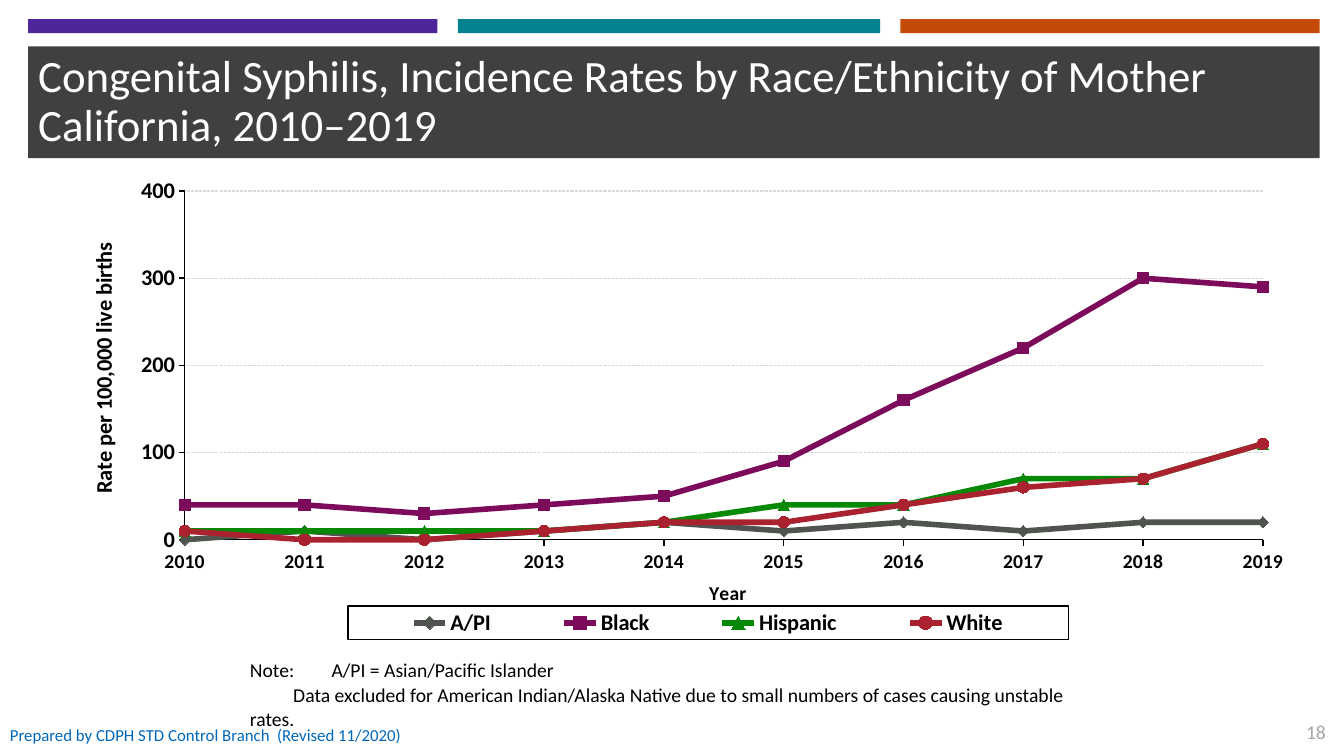
import pptx
import pptx.chart.data
import pptx.dml.color
import pptx.enum.chart
import pptx.enum.dml
import pptx.enum.shapes
import pptx.enum.text
import pptx.oxml
import pptx.oxml.ns
import pptx.util

Inches = pptx.util.Inches
Pt = pptx.util.Pt
qn = pptx.oxml.ns.qn
Align = pptx.enum.text.PP_ALIGN
Anchor = pptx.enum.text.MSO_ANCHOR
Marker = pptx.enum.chart.XL_MARKER_STYLE

COLORS = {
    "banner": "404040", "purple": "4F259C", "teal": "068190", "orange": "C44A07",
    "white": "FFFFFF", "black": "000000", "number": "A6A6A6", "footer": "0167BB",
    "grid": "D9D9D9", "api": "4F544F", "black_rate": "7C0B5B",
    "hispanic": "078807", "white_rate": "AA222F",
}
YEARS = [str(year) for year in range(2010, 2020)]
RATES = [
    ("A/PI", "api", Marker.DIAMOND, (0, 10, 0, 10, 20, 10, 20, 10, 20, 20)),
    ("Black", "black_rate", Marker.SQUARE, (40, 40, 30, 40, 50, 90, 160, 220, 300, 290)),
    ("Hispanic", "hispanic", Marker.TRIANGLE, (10, 10, 10, 10, 20, 40, 40, 70, 70, 110)),
    ("White", "white_rate", Marker.CIRCLE, (10, 0, 0, 10, 20, 20, 40, 60, 70, 110)),
]
NAMESPACES = pptx.oxml.ns.nsdecls("c", "a")


def color(name):
    return pptx.dml.color.RGBColor.from_string(COLORS[name])


def apply(target, values):
    for name, value in values.items():
        setattr(target, name, value)


def place(element, before, **fractions):
    """Give a chart part a manual layout in fractions of the chart."""
    old = element.find(qn("c:layout"))
    if old is not None:
        element.remove(old)
    target = '<c:layoutTarget val="inner"/>' if before is None else ""
    modes = "".join(f'<c:{key}Mode val="edge"/>' for key in "xy")
    sizes = "".join(f'<c:{key} val="{value}"/>' for key, value in fractions.items())
    layout = pptx.oxml.parse_xml(
        f"<c:layout {NAMESPACES}><c:manualLayout>{target}{modes}{sizes}"
        "</c:manualLayout></c:layout>")
    if before is None:
        element.insert(0, layout)
    else:
        element.find(qn(before)).addnext(layout)


class SlideBuilder:
    font_name = "Calibri"

    def __init__(self, slide):
        self.slide = slide

    def style_font(self, font, size, color_name="black", bold=False):
        apply(font, {"name": self.font_name, "size": Pt(size), "bold": bold})
        font.color.rgb = color(color_name)

    def bar(self, box, fill):
        shape = self.slide.shapes.add_shape(
            pptx.enum.shapes.MSO_SHAPE.RECTANGLE, *map(Inches, box))
        shape.shadow.inherit = False
        shape.fill.solid()
        shape.fill.fore_color.rgb = color(fill)
        shape.line.fill.background()

    def text(self, box, lines, size, color_name, frame=None, paragraph_format=None, tabs=()):
        text_frame = self.slide.shapes.add_textbox(*map(Inches, box)).text_frame
        apply(text_frame, {"word_wrap": True, **(frame or {})})
        for index, line in enumerate(lines):
            paragraph = text_frame.add_paragraph() if index else text_frame.paragraphs[0]
            apply(paragraph, paragraph_format or {})
            run = paragraph.add_run()
            run.text = line
            self.style_font(run.font, size, color_name)
            if tabs:
                stops = "".join(f'<a:tab pos="{Inches(stop)}" algn="l"/>' for stop in tabs)
                paragraph._p.get_or_add_pPr().append(
                    pptx.oxml.parse_xml(f"<a:tabLst {NAMESPACES}>{stops}</a:tabLst>"))

    def axis(self, axis, title, size, x, y):
        apply(axis, {"major_tick_mark": pptx.enum.chart.XL_TICK_MARK.OUTSIDE,
                     "minor_tick_mark": pptx.enum.chart.XL_TICK_MARK.NONE})
        axis.format.line.width = Pt(1.06)
        axis.format.line.color.rgb = color("black")
        self.style_font(axis.tick_labels.font, size, bold=True)
        run = axis.axis_title.text_frame.paragraphs[0].add_run()
        run.text = title
        self.style_font(run.font, size, bold=True)
        place(axis.axis_title._element, "c:tx", x=x, y=y)

    def line_chart(self, box):
        data = pptx.chart.data.CategoryChartData()
        data.categories = YEARS
        for name, _, _, values in RATES:
            data.add_series(name, values)
        chart = self.slide.shapes.add_chart(
            pptx.enum.chart.XL_CHART_TYPE.LINE_MARKERS, *map(Inches, box), data).chart
        apply(chart, {"has_title": False, "has_legend": True})
        self.style_font(chart.font, 16, bold=True)
        chart.plots[0].vary_by_categories = False
        place(chart._chartSpace.chart.plotArea, None, x=0.111, y=0.061, w=0.859, h=0.715)

        # Series lines and markers
        for series, (_, color_name, marker, _) in zip(chart.plots[0].series, RATES):
            series.smooth = False
            series.format.line.width = Pt(4)
            series.format.line.color.rgb = color(color_name)
            apply(series.marker, {"style": marker, "size": 8})
            series.marker.format.fill.solid()
            series.marker.format.fill.fore_color.rgb = color(color_name)
            series.marker.format.line.color.rgb = color(color_name)

        # Axes
        self.axis(chart.category_axis, "Year", 14, x=0.526, y=0.85)
        value_axis = chart.value_axis
        self.axis(value_axis, "Rate per 100,000 live births", 16, x=0.031, y=0.158)
        apply(value_axis, {"minimum_scale": 0, "maximum_scale": 400, "major_unit": 100,
                           "has_major_gridlines": True})
        apply(value_axis.tick_labels, {"number_format": "#,##0",
                                       "number_format_is_linked": False})
        grid_line = value_axis.major_gridlines.format.line
        apply(grid_line, {"width": Pt(0.75),
                          "dash_style": pptx.enum.dml.MSO_LINE.SQUARE_DOT})
        grid_line.color.rgb = color("grid")
        for crossing in value_axis._element.findall(qn("c:crossBetween")):
            value_axis._element.remove(crossing)
        value_axis._element.find(qn("c:crosses")).addnext(
            pptx.oxml.parse_xml(f'<c:crossBetween {NAMESPACES} val="midCat"/>'))

        # Framed legend
        legend = chart.legend
        apply(legend, {"position": pptx.enum.chart.XL_LEGEND_POSITION.BOTTOM,
                       "include_in_layout": False})
        self.style_font(legend.font, 16, bold=True)
        place(legend._element, "c:legendPos", x=0.241, y=0.912, w=0.574, h=0.068)
        legend._element.find(qn("c:overlay")).addnext(pptx.oxml.parse_xml(
            f'<c:spPr {NAMESPACES}><a:ln w="{Pt(1)}"><a:solidFill>'
            f'<a:srgbClr val="{COLORS["black"]}"/></a:solidFill></a:ln></c:spPr>'))


def main():
    presentation = pptx.Presentation()
    apply(presentation, {"slide_width": Inches(13.33), "slide_height": Inches(7.5)})
    builder = SlideBuilder(presentation.slides.add_slide(presentation.slide_layouts[6]))
    middle = {"vertical_anchor": Anchor.MIDDLE}

    # Banner and colour bars
    banner_box = (0.28, 0.46, 12.81, 1.11)
    builder.bar(banner_box, "banner")
    for left, width, fill in ((0.28, 4.06, "purple"), (4.54, 4.19, "teal"),
                              (8.93, 4.16, "orange")):
        builder.bar((left, 0.19, width, 0.14), fill)
    builder.text(
        banner_box,
        ["Congenital Syphilis, Incidence Rates by Race/Ethnicity of Mother "
         "California, 2010–2019"],
        32, "white", middle, {"line_spacing": 0.9})

    # Chart and note
    builder.line_chart((0.45, 1.6, 12.45, 4.84))
    builder.text(
        (2.38, 6.48, 8.75, 0.59),
        ["Note:\tA/PI = Asian/Pacific Islander",
         "\tData excluded for American Indian/Alaska Native due to small numbers "
         "of cases causing unstable rates."],
        14, "black", None, {"space_after": Pt(1)}, tabs=(0.43, 0.81))

    # Footer
    builder.text((0, 7.09, 2.8, 0.4), ["Prepared by CDPH STD Control Branch"],
                 12, "footer", middle)
    builder.text((2.65, 7.09, 1.5, 0.4), ["(Revised 11/2020)"], 12, "footer", middle)
    builder.text((12.82, 7.09, 0.43, 0.34), ["18"], 14, "number",
                 {"word_wrap": False}, {"alignment": Align.RIGHT})

    presentation.save("out.pptx")


if __name__ == "__main__":
    main()
